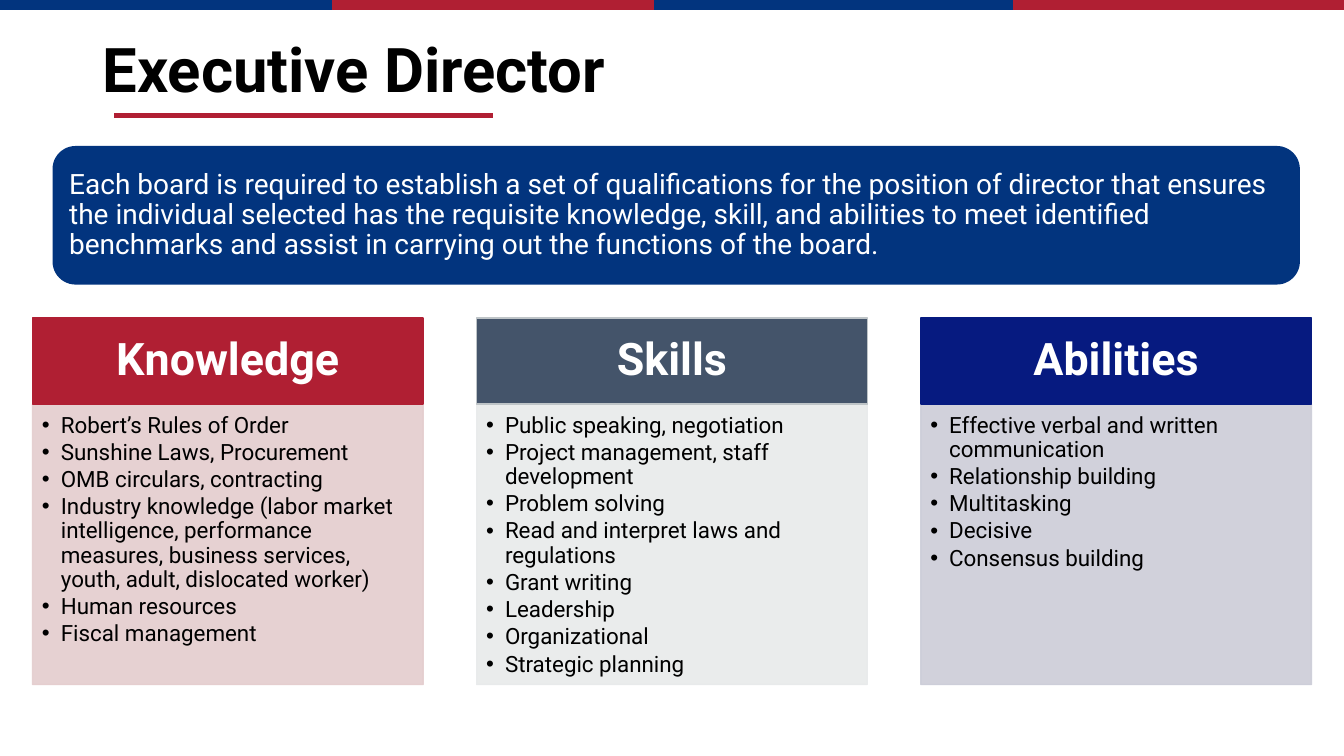
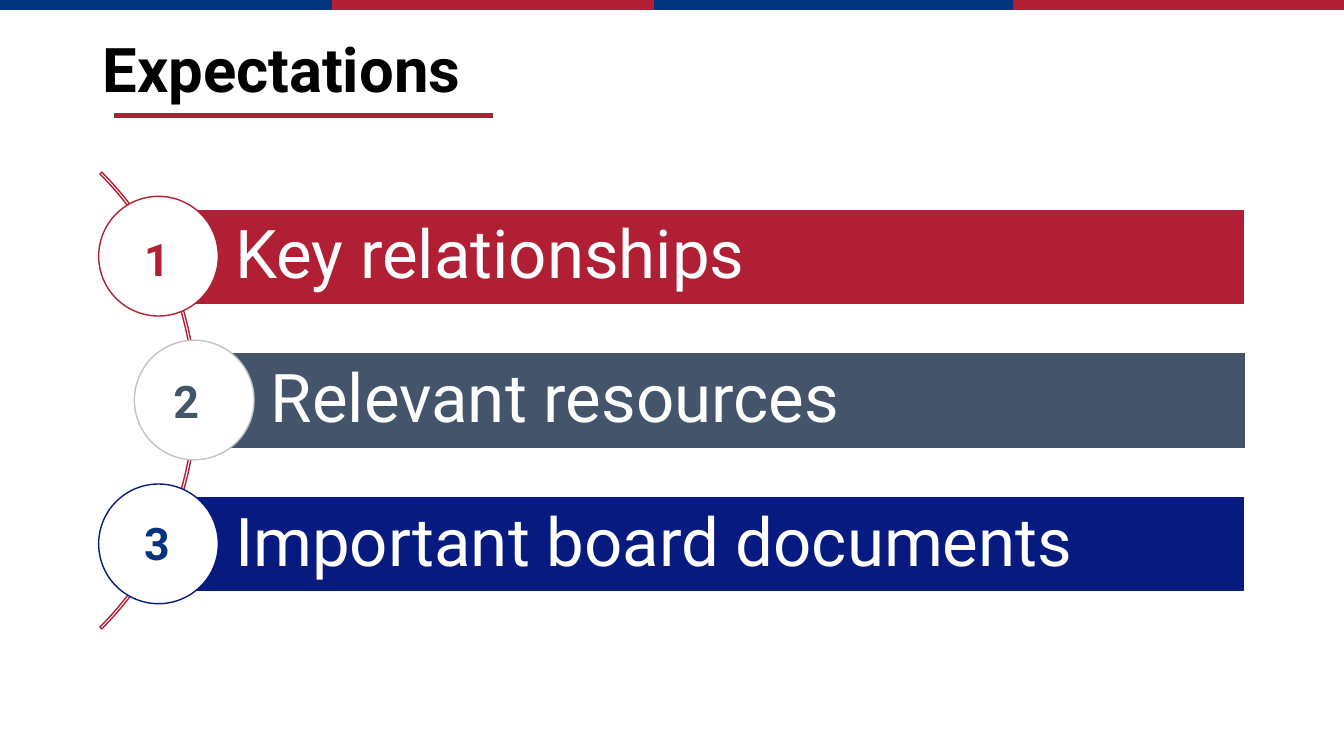
from lxml.etree import SubElement
from pptx import Presentation
from pptx.dml.color import RGBColor
from pptx.enum.shapes import MSO_CONNECTOR, MSO_SHAPE as Shape
from pptx.enum.text import MSO_ANCHOR as Anchor, MSO_AUTO_SIZE as AutoSize, PP_ALIGN as Align
from pptx.oxml.ns import qn
from pptx.util import Pt

# Style
PX = 9525  # EMU in one px
FONT = "Roboto"
BLACK = RGBColor(0x00, 0x00, 0x00)
WHITE = RGBColor(0xFF, 0xFF, 0xFF)
BLUE = RGBColor(0x02, 0x34, 0x7E)
RED = RGBColor(0xB0, 0x1F, 0x33)
BRIGHT_RED = RGBColor(0xB3, 0x20, 0x33)
SLATE = RGBColor(0x44, 0x54, 0x6A)
SILVER = RGBColor(0xBE, 0xC4, 0xC7)
NAVY = RGBColor(0x06, 0x1A, 0x80)
PALE_RED = RGBColor(0xE4, 0xCD, 0xCE)
PALE_SLATE = RGBColor(0xE8, 0xEA, 0xEB)
PALE_NAVY = RGBColor(0xCC, 0xCD, 0xD8)
COMPARISON, TITLE_ONLY = 4, 5  # layouts of the default template
BAND = [(0, 332, BLUE), (316, 623, RED), (623, 988, BLUE), (965, 1280, RED)]


class Deck:
    """Holds the style and the slide being built."""

    def __init__(self):
        self.prs = Presentation()
        self.prs.slide_width, self.prs.slide_height = 1280 * PX, 720 * PX
        self.slide = None

    def new_slide(self, title, layout):
        self.slide = self.prs.slides.add_slide(self.prs.slide_layouts[layout])
        for start, end, color in BAND:
            self.rule(start, end, 4, color, 8)
        self.rule(109, 470, 110, RED, 3.5)
        heading = self.slide.shapes.title
        self.place(heading, 88, 0, 1104, 139)
        self.set_text(heading, [title], 44, BLACK, bold=True)

    def place(self, shape, left, top, width, height):
        shape.left, shape.top = left * PX, top * PX
        shape.width, shape.height = width * PX, height * PX

    def paint(self, shape, fill, line):
        if fill is None:
            shape.fill.background()
        else:
            shape.fill.solid()
            shape.fill.fore_color.rgb = fill
        if line is None:
            shape.line.fill.background()
        else:
            shape.line.color.rgb = line
            shape.line.width = Pt(1)

    def set_text(self, shape, lines, size, color, bold=False, align=Align.LEFT,
                 anchor=Anchor.MIDDLE, insets=None, spacing=0.9, after=0, bullet=None):
        frame = shape.text_frame
        frame.text = "\n".join(lines)
        frame.word_wrap = True
        frame.auto_size = AutoSize.NONE
        frame.vertical_anchor = anchor
        if insets:
            (frame.margin_left, frame.margin_top,
             frame.margin_right, frame.margin_bottom) = [inset * PX for inset in insets]
        for paragraph in frame.paragraphs:
            if bullet:
                props = paragraph._p.get_or_add_pPr()
                props.set("marL", str(18 * PX))
                props.set("indent", str(-18 * PX))
                SubElement(props, qn("a:buChar"), char=bullet)
            paragraph.alignment = align
            paragraph.line_spacing = spacing
            paragraph.space_before = Pt(0)
            paragraph.space_after = Pt(after)
            for run in paragraph.runs:
                run.font.name, run.font.size = FONT, Pt(size)
                run.font.bold, run.font.color.rgb = bold, color

    def rule(self, start, end, y, color, weight):
        line = self.slide.shapes.add_connector(
            MSO_CONNECTOR.STRAIGHT, start * PX, y * PX, end * PX, y * PX)
        line.line.color.rgb = color
        line.line.width = Pt(weight)
        SubElement(line._element.spPr, qn("a:effectLst"))

    def shape(self, kind, box, fill=None, line=None):
        shape = self.slide.shapes.add_shape(kind, *[length * PX for length in box])
        shape.shadow.inherit = False
        self.paint(shape, fill, line)
        return shape

    def bullets(self, index, box, items, tint):
        body = self.slide.placeholders[index]
        self.place(body, *box)
        self.paint(body, tint, tint)
        for tone in body._element.spPr.iter(qn("a:srgbClr")):
            SubElement(tone, qn("a:alpha"), val="90000")
        self.set_text(body, items, 16, BLACK, anchor=Anchor.TOP,
                      insets=(9, 9, 12, 13), after=2.2, bullet="•")

    def label(self, text, box, size, color):
        label = self.slide.shapes.add_textbox(*[length * PX for length in box])
        self.set_text(label, [text], size, color, bold=True, align=Align.CENTER,
                      anchor=Anchor.TOP, spacing=1.0)
        label.text_frame.word_wrap = False

    def drop_empty_placeholders(self):
        for holder in list(self.slide.placeholders):
            if not holder.text_frame.text:
                holder._element.getparent().remove(holder._element)


QUALIFICATIONS = [
    ("Knowledge", RED, RED, PALE_RED, [
        "Robert’s Rules of Order",
        "Sunshine Laws, Procurement",
        "OMB circulars, contracting",
        "Industry knowledge (labor market intelligence, performance measures, "
        "business services, youth, adult, dislocated worker)",
        "Human resources",
        "Fiscal management"]),
    ("Skills", SLATE, SILVER, PALE_SLATE, [
        "Public speaking, negotiation",
        "Project management, staff development",
        "Problem solving",
        "Read and interpret laws and regulations",
        "Grant writing",
        "Leadership",
        "Organizational",
        "Strategic planning"]),
    ("Abilities", NAVY, NAVY, PALE_NAVY, [
        "Effective verbal and written communication",
        "Relationship building",
        "Multitasking",
        "Decisive",
        "Consensus building"]),
]

# Text, bar fill, circle line, number colour, bar left, number left
EXPECTATIONS = [
    ("Key relationships", RED, RED, BRIGHT_RED, 151, 130),
    ("Relevant resources", SLATE, SILVER, SLATE, 185, 158),
    ("Important board documents", NAVY, NAVY, BLUE, 151, 130),
]


def executive_director(deck):
    deck.new_slide("Executive Director", COMPARISON)

    # Requirement banner
    banner = deck.shape(Shape.ROUNDED_RECTANGLE, (50, 139, 1188, 132), BLUE)
    deck.set_text(banner, [
        "Each board is required to establish a set of qualifications for the position of "
        "director that ensures the individual selected has the requisite knowledge, skill, "
        "and abilities to meet identified benchmarks and assist in carrying out the "
        "functions of the board."], 20, WHITE)

    # Three columns of qualifications
    for column, (name, fill, line, tint, items) in enumerate(QUALIFICATIONS):
        left = 31 + 423 * column
        deck.bullets(column + 1, (left, 385, 372, 267), items, tint)
        header = deck.shape(Shape.RECTANGLE, (left, 303, 372, 82), fill, line)
        deck.set_text(header, [name], 32, WHITE, bold=True, align=Align.CENTER)
    deck.drop_empty_placeholders()


def expectations(deck):
    deck.new_slide("Expectations", TITLE_ONLY)

    # Arc behind the circles
    arc = deck.shape(Shape.BLOCK_ARC, (-428, 74, 615, 615), line=RED)
    for index, value in enumerate((189, 27, 0.004)):
        arc.adjustments[index] = value

    # Numbered bars
    bar_height, diameter = 91, 114
    for row, (text, fill, ring, ink, left, number_left) in enumerate(EXPECTATIONS):
        top = 199 + 137 * row
        bar = deck.shape(Shape.RECTANGLE, (left, top, 1186 - left, bar_height), fill, WHITE)
        deck.set_text(bar, [text], 48, WHITE, insets=(73, 13, 13, 13))
        circle_top = top + (bar_height - diameter) // 2
        deck.shape(Shape.OVAL, (left - diameter // 2, circle_top, diameter, diameter),
                   WHITE, ring)
        deck.label(str(row + 1), (number_left, 216 + 135 * row, 39, 61), 32, ink)


def main():
    deck = Deck()
    executive_director(deck)
    expectations(deck)
    deck.prs.save("out.pptx")


if __name__ == "__main__":
    main()
